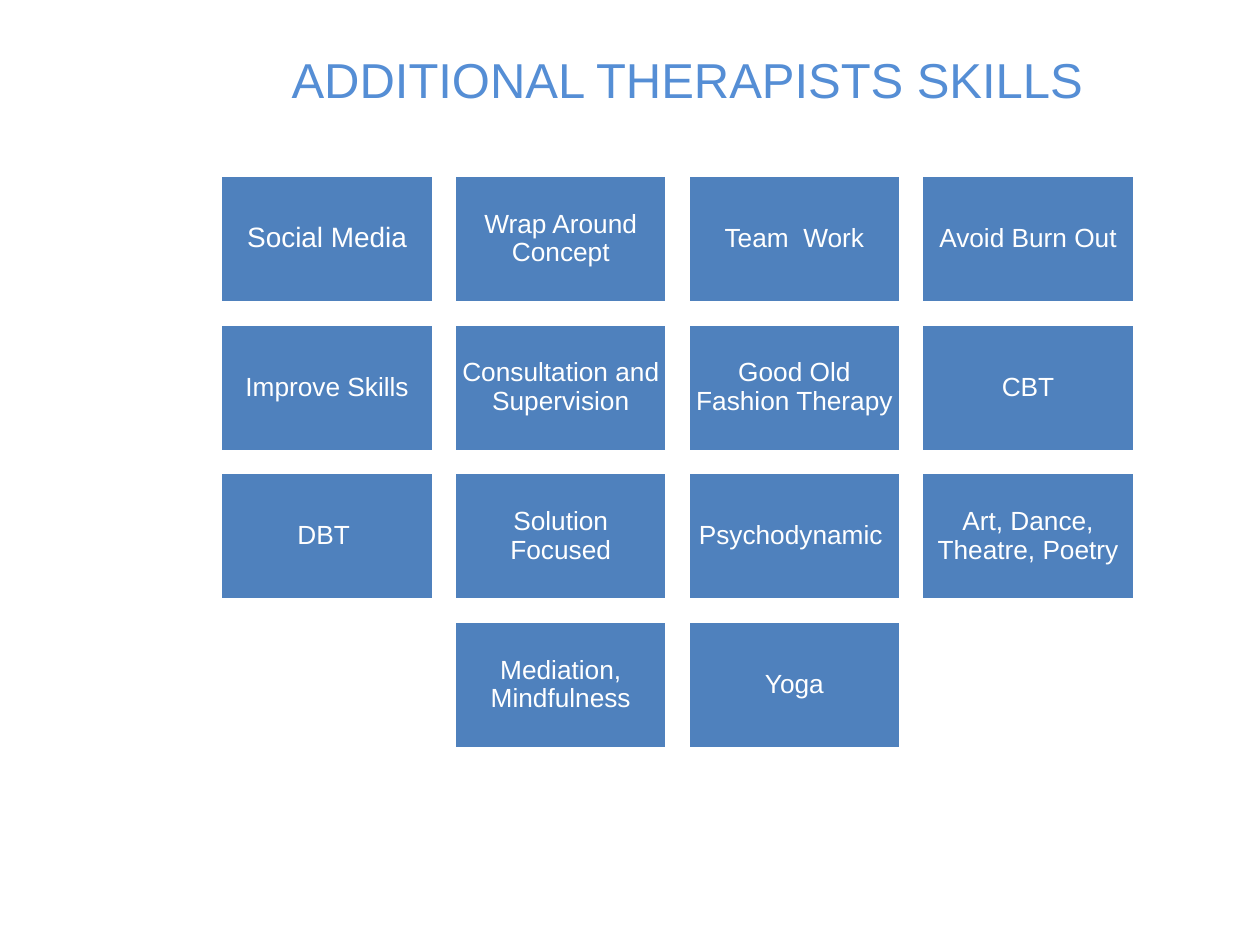
from pptx import Presentation
from pptx.dml.color import RGBColor
from pptx.enum.shapes import MSO_SHAPE
from pptx.enum.text import MSO_ANCHOR, PP_ALIGN
from pptx.util import Cm, Pt

SKILL_ROWS = [
    ["Social Media", "Wrap Around Concept", "Team  Work", "Avoid Burn Out"],
    ["Improve Skills", "Consultation and Supervision", "Good Old Fashion Therapy", "CBT"],
    ["DBT ", "Solution Focused", "Psychodynamic ", "Art, Dance, Theatre, Poetry"],
    ["Mediation, Mindfulness", "Yoga"],
]
GRID_LEFT, GRID_TOP = 4.45, 3.53
COLUMN_STEP, ROW_STEP = 4.71, 3
CARD_WIDTH, CARD_HEIGHT = 4.29, 2.57
COLUMNS = 4


def set_values(target, values):
    for name, value in values.items():
        setattr(target, name, value)


def color(hex_value):
    return RGBColor.from_string(hex_value)


def write_text(shape, text, size, hex_value, margin):
    frame = shape.text_frame
    set_values(frame, {"word_wrap": True, "vertical_anchor": MSO_ANCHOR.MIDDLE, **margin})
    para = frame.paragraphs[0]
    para.alignment = PP_ALIGN.CENTER
    span = para.add_run()
    span.text = text
    set_values(span.font, {"name": "Arial", "size": Pt(size)})
    span.font.color.rgb = color(hex_value)
    return para


def add_title(page, text):
    title = page.shapes.title
    set_values(title, {"left": Cm(4.01), "top": Cm(0.64), "width": Cm(19.69), "height": Cm(1.9)})
    write_text(title, text, 28, "558ED5", {})


def add_skill(page, text, left, top, size):
    card = page.shapes.add_shape(
        MSO_SHAPE.RECTANGLE, Cm(left), Cm(top), Cm(CARD_WIDTH), Cm(CARD_HEIGHT)
    )
    card.shadow.inherit = False
    card.fill.solid()
    card.fill.fore_color.rgb = color("4F81BD")
    card.line.color.rgb = color("FFFFFF")
    card.line.width = Pt(2)
    sides = ("left", "top", "right", "bottom")
    margin = {f"margin_{side}": Cm(0.15) for side in sides}
    para = write_text(card, text, size, "FFFFFF", margin)
    para.line_spacing = 0.9


def add_skill_grid(page):
    for row, skills in enumerate(SKILL_ROWS):
        indent = (COLUMNS - len(skills)) / 2
        for column, skill in enumerate(skills):
            left = GRID_LEFT + (column + indent) * COLUMN_STEP
            top = GRID_TOP + row * ROW_STEP
            size = 16 if row == column == 0 else 15
            add_skill(page, skill, left, top, size)


def main():
    deck = Presentation()
    set_values(deck, {"slide_width": Cm(25.4), "slide_height": Cm(19.05)})
    page = deck.slides.add_slide(deck.slide_layouts[0])
    subtitle = page.placeholders[1].element
    subtitle.getparent().remove(subtitle)
    add_title(page, "ADDITIONAL THERAPISTS SKILLS")
    add_skill_grid(page)
    deck.save("out.pptx")


if __name__ == "__main__":
    main()
